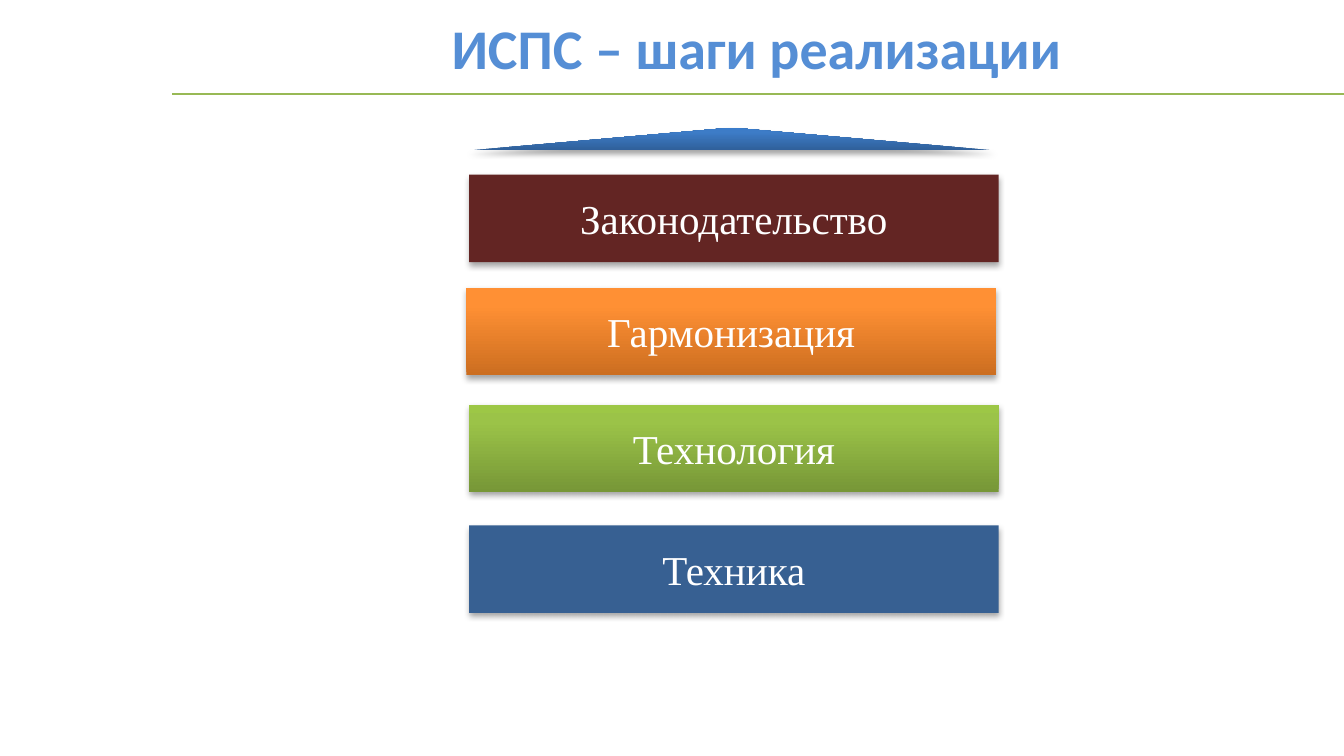
from dataclasses import dataclass

from lxml import etree
from pptx import Presentation
from pptx.dml.color import RGBColor
from pptx.enum.shapes import MSO_CONNECTOR, MSO_SHAPE
from pptx.enum.text import MSO_ANCHOR, MSO_AUTO_SIZE, PP_ALIGN
from pptx.oxml.ns import qn
from pptx.util import Inches, Pt

RECTANGLE = MSO_SHAPE.RECTANGLE
TRIANGLE = MSO_SHAPE.ISOSCELES_TRIANGLE
STRAIGHT = MSO_CONNECTOR.STRAIGHT
CENTER = PP_ALIGN.CENTER
MIDDLE = MSO_ANCHOR.MIDDLE
TOP = MSO_ANCHOR.TOP
GROW = MSO_AUTO_SIZE.SHAPE_TO_FIT_TEXT

SLIDE_WIDTH = Inches(10)
SLIDE_HEIGHT = SLIDE_WIDTH * 9 // 16
STOP_POSITIONS = (0, 80, 100)
STEP_WIDTH, STEP_HEIGHT = 3.94, 0.65


@dataclass(frozen=True)
class Step:
    """One layer of the stack; several colours make a gradient from the bottom up."""
    label: str
    left: float
    top: float
    colors: tuple[str, ...]


STEPS = (
    Step("Законодательство", 3.49, 1.3, ("632523",)),
    Step("Гармонизация", 3.47, 2.14, ("CC6E20", "FF9034", "FF9136")),
    Step("Технология", 3.49, 3.01, ("779737", "9BC348", "9DC746")),
    Step("Техника", 3.49, 3.91, ("376092",)),
)
ROOF_COLORS = ("2F5F99", "3D7CC7", "3A7CCB")


def rgb(color: str) -> RGBColor:
    """Turn a hex string into a colour."""
    return RGBColor.from_string(color)


def add_color(parent, color: str):
    """Append a hex colour element to an XML parent."""
    return etree.SubElement(parent, qn("a:srgbClr"), val=color)


def fill_shape(shape, colors: tuple[str, ...]) -> None:
    """Fill a shape with one colour or with a vertical gradient."""
    if len(colors) == 1:
        shape.fill.solid()
        shape.fill.fore_color.rgb = rgb(colors[0])
        return
    shape.fill.gradient()
    shape.fill.gradient_angle = 90
    stops = shape._element.spPr.find(".//" + qn("a:gsLst"))
    for stop in list(stops):
        stops.remove(stop)
    for position, color in zip(STOP_POSITIONS, colors):
        add_color(etree.SubElement(stops, qn("a:gs"), pos=str(position * 1000)), color)


def add_shadow(shape) -> None:
    """Give a shape a soft shadow straight below it."""
    shape.shadow.inherit = False
    effects = shape._element.spPr.find(qn("a:effectLst"))
    shadow = etree.SubElement(
        effects, qn("a:outerShdw"), blurRad=str(Pt(3.1)), dist=str(Pt(1.8)),
        dir="5400000", rotWithShape="0")
    etree.SubElement(add_color(shadow, "000000"), qn("a:alpha"), val="35000")


def add_block(slide, kind, left: float, top: float, width: float, height: float,
              colors: tuple[str, ...]):
    """Draw a filled, shadowed shape without an outline."""
    shape = slide.shapes.add_shape(
        kind, Inches(left), Inches(top), Inches(width), Inches(height))
    fill_shape(shape, colors)
    shape.line.fill.background()
    add_shadow(shape)
    return shape


def write_text(shape, text: str, *, size: float, font: str, color: str,
               bold: bool = False, anchor=MIDDLE):
    """Write one centred line of text and return its run."""
    frame = shape.text_frame
    frame.word_wrap = True
    frame.vertical_anchor = anchor
    paragraph = frame.paragraphs[0]
    paragraph.alignment = CENTER
    run = paragraph.add_run()
    run.text = text
    run.font.size = Pt(size)
    run.font.name = font
    run.font.bold = bold
    run.font.color.rgb = rgb(color)
    return run


def outline_text(run, color: str, width: float) -> None:
    """Outline the letters of a run."""
    line = etree.Element(qn("a:ln"), w=str(Pt(width)))
    add_color(etree.SubElement(line, qn("a:solidFill")), color)
    run.font._element.insert(0, line)


def add_title(slide, text: str) -> None:
    """Draw the slide title."""
    title = slide.shapes.add_textbox(Inches(1.3), Inches(0.05), Inches(8.66), Inches(0.61))
    run = write_text(title, text, size=30, font="Calibri", color="558ED5",
                     bold=True, anchor=TOP)
    title.text_frame.auto_size = GROW
    outline_text(run, "92D050", 0.75)


def add_rule(slide) -> None:
    """Draw the thin line under the title."""
    rule = slide.shapes.add_connector(
        STRAIGHT, Inches(1.28), Inches(0.7), SLIDE_WIDTH, Inches(0.7))
    rule.line.color.rgb = rgb("98B955")
    rule.line.width = Pt(0.75)
    etree.SubElement(rule._element.spPr, qn("a:effectLst"))


def add_step(slide, step: Step) -> None:
    """Draw one labelled layer of the stack."""
    block = add_block(slide, RECTANGLE, step.left, step.top,
                      STEP_WIDTH, STEP_HEIGHT, step.colors)
    write_text(block, step.label, size=22, font="Times New Roman", color="FFFFFF")


def main() -> None:
    """Build and save the slide."""
    presentation = Presentation()
    presentation.slide_width = SLIDE_WIDTH
    presentation.slide_height = SLIDE_HEIGHT
    slide = presentation.slides.add_slide(presentation.slide_layouts[6])
    add_title(slide, "ИСПС – шаги реализации")
    add_rule(slide)
    add_block(slide, TRIANGLE, 3.49, 0.95, 3.91, 0.17, ROOF_COLORS)
    for step in STEPS:
        add_step(slide, step)
    presentation.save("out.pptx")


if __name__ == "__main__":
    main()
